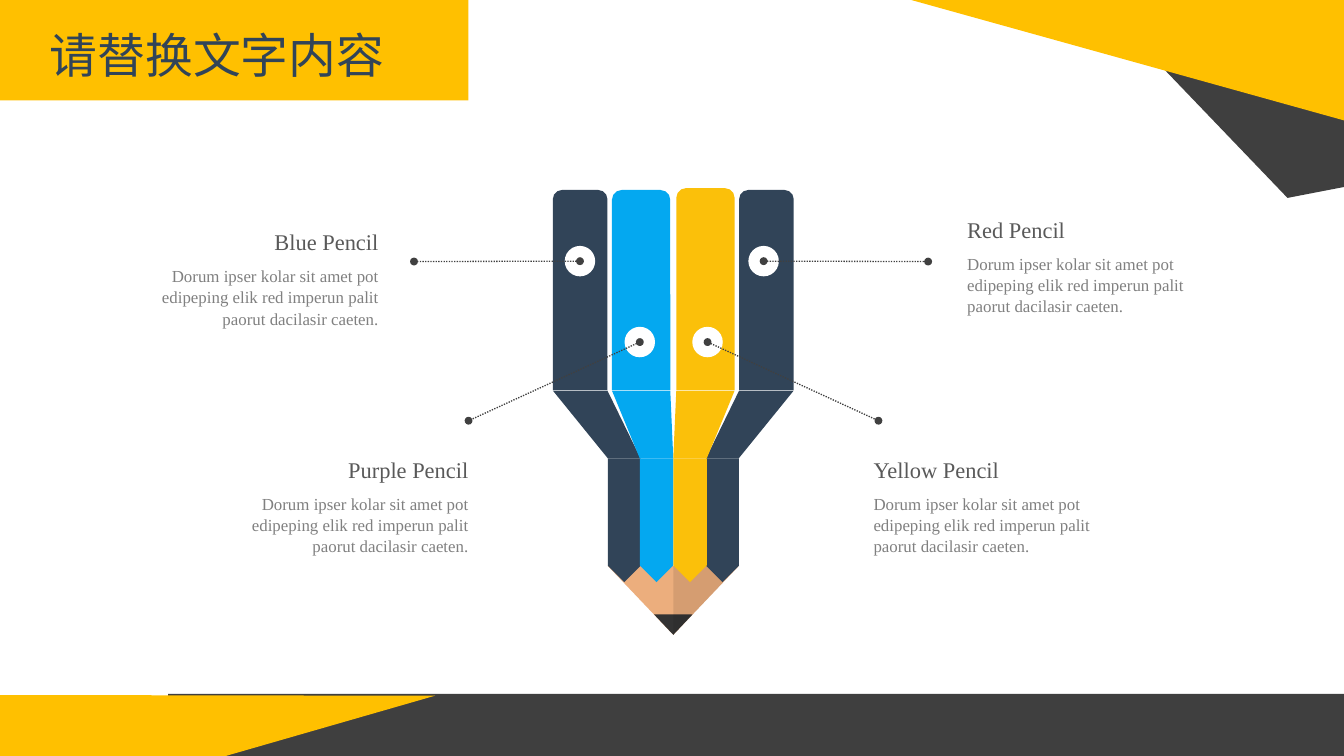
from lxml import etree
from pptx import Presentation
from pptx.dml.color import RGBColor
from pptx.enum.dml import MSO_LINE
from pptx.enum.shapes import MSO_CONNECTOR, MSO_SHAPE
from pptx.enum.text import MSO_ANCHOR, PP_ALIGN
from pptx.oxml.ns import qn
from pptx.util import Cm, Pt

RECTANGLE, OVAL = MSO_SHAPE.RECTANGLE, MSO_SHAPE.OVAL
ROUNDED_TOP, PENTAGON = MSO_SHAPE.ROUND_2_SAME_RECTANGLE, MSO_SHAPE.PENTAGON
STRAIGHT, DOTTED = MSO_CONNECTOR.STRAIGHT, MSO_LINE.ROUND_DOT
TOP, MIDDLE = MSO_ANCHOR.TOP, MSO_ANCHOR.MIDDLE
LEFT, RIGHT = PP_ALIGN.LEFT, PP_ALIGN.RIGHT

WIDTH, HEIGHT = 35.71, 20.09
AMBER, CHARCOAL, NAVY = "FFC000", "3F3F3F", "314458"
BLUE, YELLOW = "04A8F0", "FBC00A"
SANS, SERIF = "Noto Sans CJK SC", "Times New Roman"
BODY = ("Dorum ipser kolar sit amet pot edipeping elik red imperun palit "
        "paorut dacilasir caeten.")

# title, ring centre, line end, text box (left, top), alignment
CALLOUTS = [
    ("Red Pencil", (20.29, 6.94), (24.66, 6.95), (25.7, 5.72), LEFT),
    ("Yellow Pencil", (18.8, 9.09), (23.34, 11.18), (23.21, 12.09), LEFT),
    ("Blue Pencil", (15.41, 6.94), (11.0, 6.95), (3.21, 6.05), RIGHT),
    ("Purple Pencil", (17.0, 9.09), (12.45, 11.18), (5.6, 12.09), RIGHT),
]


def color(hex_string):
    return RGBColor.from_string(hex_string)


def paint(shape, fill):
    """Flat fill without outline or shadow."""
    shape.shadow.inherit = False
    shape.fill.solid()
    shape.fill.fore_color.rgb = color(fill)
    shape.line.fill.background()
    return shape


def add_preset(slide, kind, left, top, width, height, fill):
    shape = slide.shapes.add_shape(kind, Cm(left), Cm(top), Cm(width), Cm(height))
    return paint(shape, fill)


def add_polygon(slide, points, fill):
    corners = [(Cm(x), Cm(y)) for x, y in points]
    builder = slide.shapes.build_freeform(*corners[0])
    builder.add_line_segments(corners[1:], close=True)
    return paint(builder.convert_to_shape(), fill)


def add_text(slide, box, text, size, font, fill, alignment=LEFT,
             anchor=TOP, inset=0.0, spacing=None):
    shape = slide.shapes.add_textbox(*(Cm(value) for value in box))
    frame = shape.text_frame
    frame.word_wrap = True
    frame.vertical_anchor = anchor
    frame.margin_left = frame.margin_right = Cm(inset)
    frame.margin_top = frame.margin_bottom = Cm(inset / 2)
    paragraph = frame.paragraphs[0]
    paragraph.alignment = alignment
    paragraph.line_spacing = spacing
    run = paragraph.add_run()
    run.text = text
    run.font.size = Pt(size)
    run.font.name = font
    run.font.color.rgb = color(fill)
    # East Asian glyphs take their typeface from a separate element
    etree.SubElement(run.font._element, qn("a:ea"), typeface=font)


def draw_header(slide, left, top):
    add_preset(slide, RECTANGLE, left, top, 12.45, 2.67, AMBER)
    add_text(slide, (left + 1.07, top + 0.56, 14.35, 1.8), "请替换文字内容",
             36, SANS, NAVY, inset=0.25)


def draw_corner(slide, right, top):
    add_polygon(slide, [(right - 4.77, top + 1.85), (right - 1.5, top + 5.26),
                        (right, top + 4.97), (right, top + 3.1)], CHARCOAL)
    add_polygon(slide, [(right - 11.5, top), (right, top), (right, top + 3.2)], AMBER)


def draw_footer(slide, width, bottom):
    add_preset(slide, RECTANGLE, 4.47, bottom - 1.65, width - 4.47, 1.65, CHARCOAL)
    add_polygon(slide, [(0, bottom - 1.62), (11.56, bottom - 1.6),
                        (6, bottom), (0, bottom)], AMBER)


def draw_tip(slide, center, top):
    """Wooden point with its lead; the right half is shaded."""
    point = (center, top + 1.83)
    add_polygon(slide, [(center - 1.74, top), (center + 1.74, top), point], "ECAE7D")
    add_polygon(slide, [(center - 0.51, top + 1.29), (center + 0.51, top + 1.29),
                        point], "333333")
    shade = add_polygon(slide, [(center, top), (center + 1.74, top), point], "0D0D0D")
    for fill_color in shade.element.spPr.iter(qn("a:srgbClr")):
        etree.SubElement(fill_color, qn("a:alpha"), val="10000")


def draw_strand(slide, center, top, side, bar, tube, fill, rise=0.0):
    """Bar, taper and tube; bar and tube are spans measured from the center."""
    bar_left, bar_right = sorted(center + side * x for x in bar)
    tube_left, tube_right = sorted(center + side * x for x in tube)
    bar_top, taper_top, taper_bottom = top + 0.05 - rise, top + 5.38, top + 7.18
    tube_length, tube_width = 3.29, tube_right - tube_left

    add_preset(slide, ROUNDED_TOP, bar_left, bar_top, bar_right - bar_left,
               top + 5.36 - bar_top, fill)
    add_polygon(slide, [(bar_left, taper_top), (bar_right, taper_top),
                        (tube_right, taper_bottom), (tube_left, taper_bottom)], fill)
    pentagon = add_preset(slide, PENTAGON,
                          (tube_left + tube_right - tube_length) / 2,
                          taper_bottom + (tube_length - tube_width) / 2,
                          tube_length, tube_width, fill)
    pentagon.rotation = 90


def draw_pencil(slide, center, top):
    draw_tip(slide, center, top + 10.04)
    outer = ((1.75, 3.2), (0.87, 1.74))
    inner = ((0.08, 1.63), (0, 0.89))
    draw_strand(slide, center, top, -1, *outer, NAVY)
    draw_strand(slide, center, top, -1, *inner, BLUE)
    draw_strand(slide, center, top, 1, *outer, NAVY)
    draw_strand(slide, center, top, 1, *inner, YELLOW, rise=0.05)


def draw_leader(slide, start, end):
    """White ring at the start of a dotted line with round ends."""
    diameter = 0.81
    add_preset(slide, OVAL, start[0] - diameter / 2, start[1] - diameter / 2,
               diameter, diameter, "FFFFFF")
    connector = slide.shapes.add_connector(
        STRAIGHT, *(Cm(value) for value in start + end))
    connector.line.color.rgb = color("404040")
    connector.line.width = Pt(1)
    connector.line.dash_style = DOTTED
    properties = connector.element.spPr
    line = properties.find(qn("a:ln"))
    for name in ("a:headEnd", "a:tailEnd"):
        etree.SubElement(line, qn(name), type="oval")
    etree.SubElement(properties, qn("a:effectLst"))


def draw_callout(slide, title, ring, end, corner, alignment):
    left, top = corner
    width, title_width, inset = 6.85, 5.9, 0.28
    title_left = left - inset
    if alignment == RIGHT:
        title_left = left + width + inset - title_width
    draw_leader(slide, ring, end)
    add_text(slide, (title_left, top, title_width, 0.76), title, 16.9, SERIF,
             "595959", alignment, MIDDLE, inset)
    add_text(slide, (left, top + 0.99, width, 1.63), BODY, 12.7, SERIF,
             "808080", alignment, spacing=1.05)


def main():
    presentation = Presentation()
    presentation.slide_width, presentation.slide_height = Cm(WIDTH), Cm(HEIGHT)
    slide = presentation.slides.add_slide(presentation.slide_layouts[6])
    draw_header(slide, 0, 0)
    draw_corner(slide, WIDTH, 0)
    draw_footer(slide, WIDTH, HEIGHT)
    draw_pencil(slide, 17.89, 5)
    for callout in CALLOUTS:
        draw_callout(slide, *callout)
    presentation.save("out.pptx")


if __name__ == "__main__":
    main()
